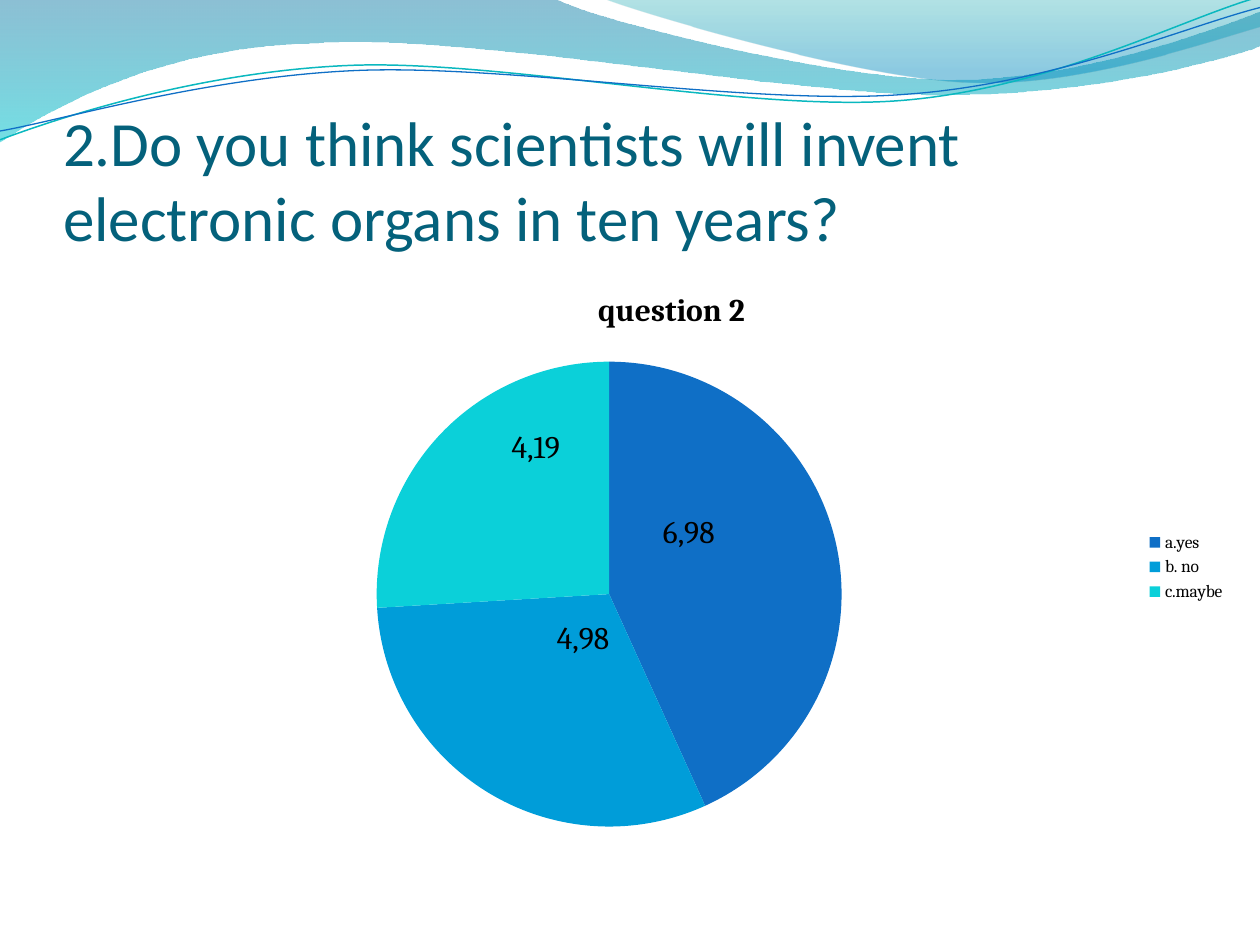
"""Build the survey slide with a pie chart under a wave banner."""
import lxml.etree
import pptx
import pptx.chart.data
import pptx.dml.color
import pptx.enum.chart
import pptx.enum.text
import pptx.oxml
import pptx.oxml.ns
import pptx.util

Inches = pptx.util.Inches
qn = pptx.oxml.ns.qn

QUESTION = "2.Do you think scientists will invent electronic organs in ten years?"
SERIES = "question 2"
ANSWERS = [
    {"name": "a.yes", "value": 6.98, "label": "6,98", "color": "0F6FC6", "shift": (-0.03, -0.06)},
    {"name": "b. no", "value": 4.98, "label": "4,98", "color": "009DD9", "shift": (0.03, -0.09)},
    {"name": "c.maybe", "value": 4.19, "label": "4,19", "color": "0BD0D9", "shift": (0.01, -0.11)},
]
BANDS = [
    {"start": (0, 0), "stops": [(0, "0074A1", 45), (1, "00C6CF", 55)],
     "steps": [(4.4, -0.01), (4.76, 0.17, 6.64, 0.63, 7.58, 0.63),
               (8.53, 0.63, 9.58, 0.26, 10, 0.09), (10.01, 0.36),
               (9.83, 0.44, 8.7, 0.76, 7.46, 0.75), (6.22, 0.75, 3.82, 0.28, 2.57, 0.34),
               (1.29, 0.36, 0.46, 0.83, -0.01, 1.13), (0, 0)]},
    {"start": (4.79, -0.01), "stops": [(0, "00A1A9", 30), (0.8, "008BBF", 45)],
     "steps": [(5.09, 0.11, 6.82, 0.62, 7.69, 0.65), (8.56, 0.69, 9.61, 0.32, 10, 0.21),
               (10, 0), (4.79, -0.01)]},
]
STRANDS = [
    {"start": (0, 1.11), "color": "0AB8BF", "width": 0.85,
     "steps": [(0.48, 0.93, 1.58, 0.57, 2.77, 0.52), (3.95, 0.47, 5.93, 0.89, 7.13, 0.8),
               (8.33, 0.71, 9.38, 0.15, 9.98, -0.02)]},
    {"start": (0, 1.04), "color": "0F6FC6", "width": 0.75,
     "steps": [(0.47, 0.96, 1.64, 0.61, 2.83, 0.56), (4.03, 0.51, 5.97, 0.84, 7.17, 0.75),
               (8.36, 0.67, 9.41, 0.21, 10, 0.06)]},
]
THEME = {
    "heading": {"name": "Calibri", "size": 36, "color": "04617B", "bold": False},
    "chart": {"name": "Cambria", "size": 10, "color": "000000"},
    "chart_title": {"name": "Cambria", "size": 18, "color": "000000", "bold": True},
    "value": {"name": "Cambria", "size": 18, "color": "000000", "bold": False},
}
HEADING_BOX = (0.5, 0.77, 9, 1.25)
CHART_BOX = (0.83, 2.1, 9, 4.8)
PIE_AREA = {"layoutTarget": "inner", "xMode": "edge", "yMode": "edge",
            "x": 0.24, "y": 0.16, "w": 0.41, "h": 0.77}


def rgb(code):
    return pptx.dml.color.RGBColor.from_string(code)


def assign(target, values):
    for name, value in values.items():
        setattr(target, name, value)


def style(font, role):
    for name, value in THEME[role].items():
        if name == "color":
            font.color.rgb = rgb(value)
        else:
            setattr(font, name, pptx.util.Pt(value) if name == "size" else value)


def add_wave(slide, wave, close):
    """Lay out every anchor as a segment, then join the triples into curves."""
    builder = slide.shapes.build_freeform(*map(Inches, wave["start"]))
    for step in wave["steps"]:
        anchors = [tuple(map(Inches, pair)) for pair in zip(step[::2], step[1::2])]
        builder.add_line_segments(anchors, close=close and step is wave["steps"][-1])
    outline = builder.convert_to_shape()
    outline.shadow.inherit = False
    segments = iter(list(outline.element.iter(qn("a:lnTo"))))
    for step in wave["steps"]:
        first, *others = [next(segments) for _ in step[::2]]
        if others:
            curve = lxml.etree.Element(qn("a:cubicBezTo"))
            first.addprevious(curve)
            for segment in (first, *others):
                curve.append(segment[0])
                segment.getparent().remove(segment)
    return outline


def add_band(slide, band):
    outline = add_wave(slide, band, True)
    outline.line.fill.background()
    outline.fill.gradient()
    outline.fill.gradient_angle = 270
    for stop, (position, color, _) in zip(outline.fill.gradient_stops, band["stops"]):
        stop.color.rgb = rgb(color)
        stop.position = position
    for color, (_, _, opacity) in zip(outline.element.iter(qn("a:srgbClr")), band["stops"]):
        lxml.etree.SubElement(color, qn("a:alpha")).set("val", str(opacity * 1000))


def add_strand(slide, strand):
    outline = add_wave(slide, strand, False)
    outline.fill.background()
    outline.line.color.rgb = rgb(strand["color"])
    outline.line.width = pptx.util.Pt(strand["width"])


def manual_layout(values):
    layout = pptx.oxml.parse_xml(f"<c:layout {pptx.oxml.ns.nsdecls('c')}/>")
    manual = lxml.etree.SubElement(layout, qn("c:manualLayout"))
    for name, value in values.items():
        lxml.etree.SubElement(manual, qn(f"c:{name}")).set("val", str(value))
    return layout


def add_heading(slide):
    heading = slide.shapes.title
    slide.shapes.element.append(heading.element)
    assign(heading, dict(zip(("left", "top", "width", "height"), map(Inches, HEADING_BOX))))
    frame = heading.text_frame
    frame.text = QUESTION
    assign(frame, {"margin_left": 0, "margin_right": 0, "margin_top": Inches(0.05),
                   "margin_bottom": 0, "word_wrap": True,
                   "auto_size": pptx.enum.text.MSO_AUTO_SIZE.NONE,
                   "vertical_anchor": pptx.enum.text.MSO_ANCHOR.BOTTOM})
    frame.paragraphs[0].alignment = pptx.enum.text.PP_ALIGN.LEFT
    style(frame.paragraphs[0].runs[0].font, "heading")


def add_pie(slide):
    survey = pptx.chart.data.CategoryChartData()
    survey.categories = [answer["name"] for answer in ANSWERS]
    survey.add_series(SERIES, [answer["value"] for answer in ANSWERS])
    pie = slide.shapes.add_chart(pptx.enum.chart.XL_CHART_TYPE.PIE,
                                 *map(Inches, CHART_BOX), survey).chart
    style(pie.font, "chart")
    assign(pie, {"has_title": True, "has_legend": True})
    assign(pie.legend, {"position": pptx.enum.chart.XL_LEGEND_POSITION.RIGHT,
                        "include_in_layout": False})
    pie.chart_title.text_frame.text = SERIES
    style(pie.chart_title.text_frame.paragraphs[0].runs[0].font, "chart_title")

    plot = pie.plots[0]
    plot.vary_by_categories = True
    plot_area = pie.element.find(f".//{qn('c:plotArea')}")
    for automatic in plot_area.findall(qn("c:layout")):
        plot_area.remove(automatic)
    plot_area.insert(0, manual_layout(PIE_AREA))

    votes = plot.series[0]
    votes.data_labels.show_value = True
    style(votes.data_labels.font, "value")
    for index, answer in enumerate(ANSWERS):
        point = votes.points[index]
        point.format.fill.solid()
        point.format.fill.fore_color.rgb = rgb(answer["color"])
        label = point.data_label
        label.text_frame.text = answer["label"]
        style(label.text_frame.paragraphs[0].runs[0].font, "value")
        label.position = pptx.enum.chart.XL_LABEL_POSITION.CENTER
    for label, answer in zip(pie.element.iter(qn("c:dLbl")), ANSWERS):
        label.insert(1, manual_layout(dict(zip("xy", answer["shift"]))))


def main():
    deck = pptx.Presentation()
    assign(deck, {"slide_width": Inches(10), "slide_height": Inches(7.5)})
    slide = deck.slides.add_slide(deck.slide_layouts[5])
    for band in BANDS:
        add_band(slide, band)
    for strand in STRANDS:
        add_strand(slide, strand)
    add_heading(slide)
    add_pie(slide)
    deck.save("out.pptx")


if __name__ == "__main__":
    main()
